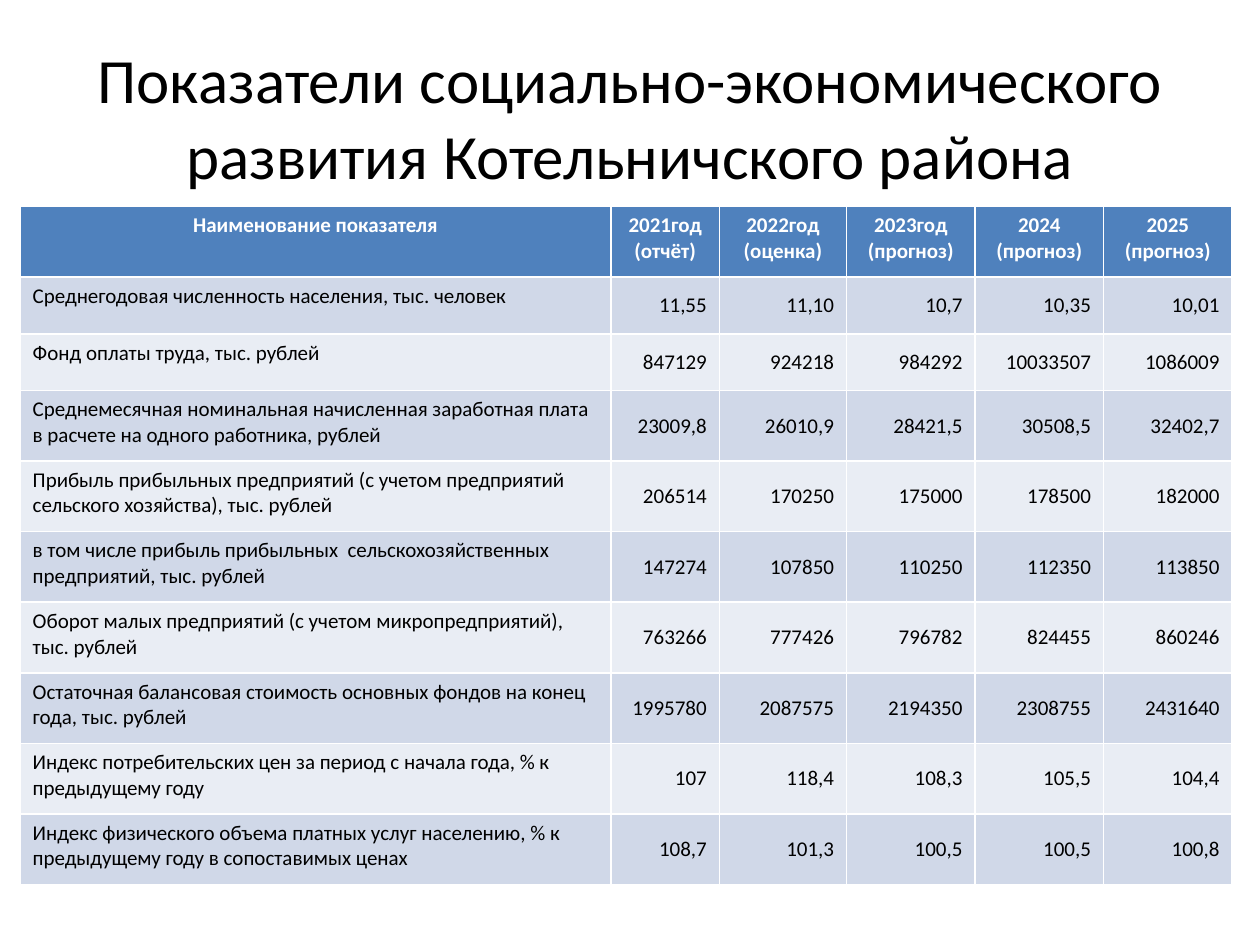
import pptx
import pptx.util
import pptx.dml.color
import pptx.enum.text

Inches = pptx.util.Inches
ALIGN = pptx.enum.text.PP_ALIGN
ANCHOR = pptx.enum.text.MSO_ANCHOR

TITLE = "Показатели социально-экономического развития Котельничского района"
HEADERS = ["Наименование показателя", "2021год (отчёт)", "2022год (оценка)",
           "2023год (прогноз)", "2024\n(прогноз)", "2025\n(прогноз)"]
INDICATORS = [
    ("Среднегодовая численность населения, тыс. человек",
     "11,55 11,10 10,7 10,35 10,01"),
    ("Фонд оплаты труда, тыс. рублей",
     "847129 924218 984292 10033507 1086009"),
    ("Среднемесячная номинальная начисленная заработная плата в расчете на одного работника, рублей",
     "23009,8 26010,9 28421,5 30508,5 32402,7"),
    ("Прибыль прибыльных предприятий (с учетом предприятий сельского хозяйства), тыс. рублей",
     "206514 170250 175000 178500 182000"),
    ("в том числе прибыль прибыльных  сельскохозяйственных предприятий, тыс. рублей",
     "147274 107850 110250 112350 113850"),
    ("Оборот малых предприятий (с учетом микропредприятий), тыс. рублей",
     "763266 777426 796782 824455 860246"),
    ("Остаточная балансовая стоимость основных фондов на конец года, тыс. рублей",
     "1995780 2087575 2194350 2308755 2431640"),
    ("Индекс потребительских цен за период с начала года, % к предыдущему году",
     "107 118,4 108,3 105,5 104,4"),
    ("Индекс физического объема платных услуг населению, % к предыдущему году в сопоставимых ценах",
     "108,7 101,3 100,5 100,5 100,8"),
]
COL_WIDTHS = [4.69, 0.86, 1.01, 1.02, 1.02, 1.02]
ROW_HEIGHTS = [0.56, 0.45, 0.45] + [0.56] * 7
HEADER_FILL = "4F81BD"
BAND_FILLS = ["D0D8E8", "E9EDF4"]


def rgb(value):
    return pptx.dml.color.RGBColor.from_string(value)


def set_text(tf, text, size=12, color="000000", bold=False, align=ALIGN.LEFT):
    tf.text = text
    for p in tf.paragraphs:
        p.alignment = align
        for r in p.runs:
            r.font.name = "Calibri"
            r.font.size = pptx.util.Pt(size)
            r.font.bold = bold
            r.font.color.rgb = rgb(color)


def set_cell(cell, text, fill, anchor=ANCHOR.TOP, **text_format):
    cell.fill.solid()
    cell.fill.fore_color.rgb = rgb(fill)
    cell.vertical_anchor = anchor
    set_text(cell.text_frame, text, **text_format)


def add_title(s):
    sp = s.shapes.title
    sp.left, sp.top = Inches(0.5), Inches(0.3)
    sp.width, sp.height = Inches(9), Inches(1.25)
    sp.text_frame.vertical_anchor = ANCHOR.MIDDLE
    set_text(sp.text_frame, TITLE, size=36, align=ALIGN.CENTER)


def add_indicator_table(s):
    table = s.shapes.add_table(
        len(ROW_HEIGHTS), len(COL_WIDTHS), Inches(0.16), Inches(1.64),
        Inches(sum(COL_WIDTHS)), Inches(sum(ROW_HEIGHTS))).table
    for col, width in zip(table.columns, COL_WIDTHS):
        col.width = Inches(width)
    for row, height in zip(table.rows, ROW_HEIGHTS):
        row.height = Inches(height)
    for c, header in enumerate(HEADERS):
        set_cell(table.cell(0, c), header, HEADER_FILL,
                 color="FFFFFF", bold=True, align=ALIGN.CENTER)
    for i, (name, values) in enumerate(INDICATORS):
        fill = BAND_FILLS[i % 2]
        set_cell(table.cell(i + 1, 0), name, fill)
        for c, value in enumerate(values.split(), 1):
            set_cell(table.cell(i + 1, c), value, fill,
                     anchor=ANCHOR.MIDDLE, align=ALIGN.RIGHT)


def main():
    prs = pptx.Presentation()
    prs.slide_width, prs.slide_height = Inches(10), Inches(7.5)
    s = prs.slides.add_slide(prs.slide_layouts[5])
    add_title(s)
    add_indicator_table(s)
    prs.save("out.pptx")


if __name__ == "__main__":
    main()
